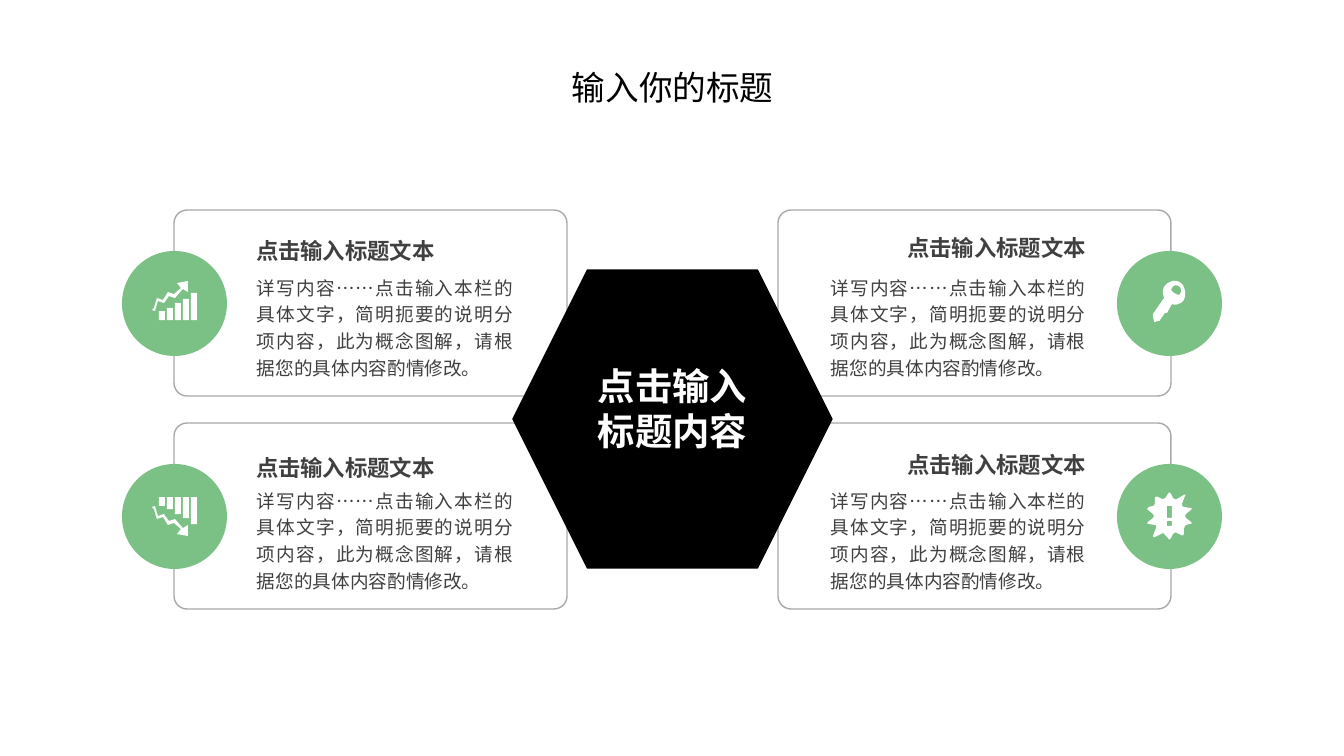
from dataclasses import dataclass
from typing import NamedTuple

from lxml.etree import SubElement
from pptx import Presentation
from pptx.dml.color import RGBColor
from pptx.enum.shapes import MSO_SHAPE as Preset
from pptx.enum.text import MSO_ANCHOR as Anchor, PP_ALIGN as Align
from pptx.oxml.ns import qn
from pptx.shapes.autoshape import Shape
from pptx.slide import Slide
from pptx.util import Emu, Pt

EMU_PER_PX = 914400 / 100.8
FONT = "Noto Sans CJK SC"
GREEN, GRAY, DARK, BLACK, WHITE = "7BC185", "A6AAA9", "404040", "000000", "FFFFFF"
HEADING = "点击输入标题文本"
DETAIL = "详写内容……点击输入本栏的具体文字，简明扼要的说明分项内容，此为概念图解，请根据您的具体内容酌情修改。"
ROW_STEP = 213
CURVE_STEPS = 6

Contour = list[tuple[int, ...]]


class Box(NamedTuple):
    left: int
    top: int
    width: int
    height: int

    def down(self, distance: int) -> "Box":
        return self._replace(top=self.top + distance)


@dataclass(frozen=True)
class TextStyle:
    size: float
    color: str
    bold: bool = False
    align: Align = Align.LEFT
    anchor: Anchor = Anchor.TOP
    line_spacing: float = 1.0
    space_before: int = 0
    inset: bool = False


@dataclass(frozen=True)
class Icon:
    left: int
    top: int
    contours: list[Contour]


@dataclass(frozen=True)
class Side:
    card: Box
    heading: Box
    heading_style: TextStyle
    detail: Box
    detail_style: TextStyle
    badge: Box
    icons: tuple[Icon, Icon]


def px(value: float) -> Emu:
    return Emu(round(value * EMU_PER_PX))


def rgb(color: str) -> RGBColor:
    return RGBColor.from_string(color)


def paint(shape: Shape, fill: str | None, line: str | None) -> None:
    shape.shadow.inherit = False
    if fill:
        shape.fill.solid()
        shape.fill.fore_color.rgb = rgb(fill)
    else:
        shape.fill.background()
    if line:
        shape.line.color.rgb = rgb(line)
        shape.line.width = Pt(1)
    else:
        shape.line.fill.background()


def add_preset(page: Slide, preset: Preset, box: Box, fill: str | None, line: str | None) -> Shape:
    shape = page.shapes.add_shape(preset, *map(px, box))
    paint(shape, fill, line)
    return shape


def add_text(page: Slide, box: Box, text: str, style: TextStyle) -> None:
    frame = page.shapes.add_textbox(*map(px, box)).text_frame
    frame.word_wrap = True
    frame.vertical_anchor = style.anchor
    if not style.inset:
        frame.margin_left = frame.margin_right = 0
        frame.margin_top = frame.margin_bottom = 0
    para = frame.paragraphs[0]
    para.text = text
    para.alignment = style.align
    para.line_spacing = style.line_spacing
    para.space_before = Pt(style.space_before)
    font = para.font
    font.name = FONT
    font.size = Pt(style.size)
    font.bold = style.bold
    font.color.rgb = rgb(style.color)
    SubElement(font._element, qn("a:ea"), typeface=FONT)


def trace(contour: Contour) -> list[tuple[float, float]]:
    points: list[tuple[float, float]] = [contour[0]]
    for segment in contour[1:]:
        if len(segment) == 2:
            points.append(segment)
            continue
        controls = [points[-1], segment[:2], segment[2:4], segment[4:]]
        for step in range(1, CURVE_STEPS + 1):
            t = step / CURVE_STEPS
            weights = ((1 - t) ** 3, 3 * t * (1 - t) ** 2, 3 * t * t * (1 - t), t**3)
            points.append(tuple(sum(w * c[axis] for w, c in zip(weights, controls)) for axis in (0, 1)))
    return points


def add_icon(page: Slide, icon: Icon) -> None:
    outlines = [
        [(px(icon.left + x), px(icon.top + y)) for x, y in trace(contour)]
        for contour in icon.contours
    ]
    builder = page.shapes.build_freeform(*outlines[0][0], scale=1.0)
    for index, outline in enumerate(outlines):
        if index:
            builder.move_to(*outline[0])
        builder.add_line_segments(outline[1:], close=True)
    paint(builder.convert_to_shape(), WHITE, None)


def rectangle(left: int, top: int, right: int, bottom: int) -> Contour:
    return [(left, top), (right, top), (right, bottom), (left, bottom)]


CHART_HEIGHT = 39
TREND = [
    (17, 15), (23, 17), (30, 9), (31, 8), (36, 11), (36, 0), (25, 2), (29, 7), (22, 13),
    (16, 11), (11, 19), (5, 17), (2, 27), (0, 29), (3, 30), (6, 20), (12, 22),
]
GROWTH = [TREND] + [
    rectangle(7 + 8 * index, top, 13 + 8 * index, CHART_HEIGHT)
    for index, top in enumerate((30, 27, 22, 18, 12))
]
DECLINE = [[(x, CHART_HEIGHT - y) for x, y in contour] for contour in GROWTH]
KEY = [
    [(27, 13), (25, 15, 24, 13, 21, 12), (19, 10, 17, 9, 19, 7), (20, 4, 23, 4, 26, 5),
     (28, 7, 29, 10, 27, 13)],
    [(32, 10), (31, 3, 26, -1, 20, 0), (14, 1, 9, 6, 10, 12), (10, 14, 11, 16, 11, 17),
     (0, 33), (0, 34, 0, 35, 0, 36), (1, 40), (1, 41, 1, 41, 2, 41), (5, 40),
     (6, 40, 7, 40, 7, 39), (12, 32), (14, 32), (19, 23), (21, 24, 23, 24, 25, 23),
     (31, 22, 33, 16, 32, 10)],
]
ALERT = [
    rectangle(19, 13, 24, 25),
    rectangle(19, 28, 24, 33),
    [(43, 29), (38, 25), (37, 24, 37, 22, 38, 21), (43, 17), (44, 16, 44, 15, 42, 15),
     (36, 14), (35, 14, 34, 13, 34, 11), (37, 3), (38, 2, 37, 1, 36, 2), (29, 6),
     (28, 7, 26, 6, 25, 5), (23, 1), (22, -1, 21, -1, 20, 1), (18, 4),
     (17, 6, 15, 6, 14, 6), (10, 4), (8, 3, 7, 4, 7, 6), (7, 10), (7, 11, 6, 13, 5, 13),
     (1, 14), (-1, 15, -1, 16, 0, 17), (5, 21), (6, 22, 6, 24, 5, 25), (0, 29),
     (-1, 30, -1, 31, 1, 31), (6, 32), (8, 32, 9, 33, 8, 35), (5, 43),
     (5, 44, 6, 45, 7, 44), (13, 41), (15, 40, 16, 40, 17, 42), (20, 45),
     (21, 47, 22, 47, 23, 45), (25, 41), (26, 40, 28, 39, 29, 40), (33, 42),
     (35, 43, 36, 42, 36, 40), (36, 36), (36, 35, 37, 33, 38, 32), (42, 31),
     (44, 31, 44, 30, 43, 29)],
]

SIDES = [
    Side(Box(174, 210, 393, 186),
         Box(256, 226, 206, 44), TextStyle(16, DARK, True, Align.LEFT, Anchor.MIDDLE, 1.2),
         Box(257, 272, 256, 56), TextStyle(13.3, DARK, False, Align.JUSTIFY, Anchor.TOP, 1.2, 25),
         Box(122, 251, 105, 105), (Icon(152, 281, GROWTH), Icon(152, 497, DECLINE))),
    Side(Box(778, 210, 393, 186),
         Box(880, 226, 206, 44), TextStyle(16, DARK, True, Align.RIGHT, Anchor.MIDDLE),
         Box(831, 272, 255, 56), TextStyle(13.3, DARK, False, Align.JUSTIFY, Anchor.TOP, 1.2, 45),
         Box(1117, 251, 105, 105), (Icon(1153, 281, KEY), Icon(1148, 493, ALERT))),
]


def main() -> None:
    deck = Presentation()
    deck.slide_width, deck.slide_height = px(1344), px(756)
    page = deck.slides.add_slide(deck.slide_layouts[6])
    for side in SIDES:
        for row in range(2):
            card = add_preset(page, Preset.ROUNDED_RECTANGLE, side.card.down(row * ROW_STEP), None, GRAY)
            card.adjustments[0] = 0.07
    add_preset(page, Preset.HEXAGON, Box(513, 270, 319, 298), BLACK, BLACK)
    for side in SIDES:
        for row, icon in enumerate(side.icons):
            add_text(page, side.detail.down(row * ROW_STEP), DETAIL, side.detail_style)
            add_text(page, side.heading.down(row * (ROW_STEP + 4)), HEADING, side.heading_style)
            add_preset(page, Preset.OVAL, side.badge.down(row * ROW_STEP), GREEN, None)
            add_icon(page, icon)
    add_text(page, Box(588, 373, 169, 70), "点击输入标题内容",
             TextStyle(26.7, WHITE, True, Align.CENTER, Anchor.MIDDLE, space_before=10))
    add_text(page, Box(562, 62, 266, 50), "输入你的标题", TextStyle(24, BLACK, inset=True))
    deck.save("out.pptx")


if __name__ == "__main__":
    main()
